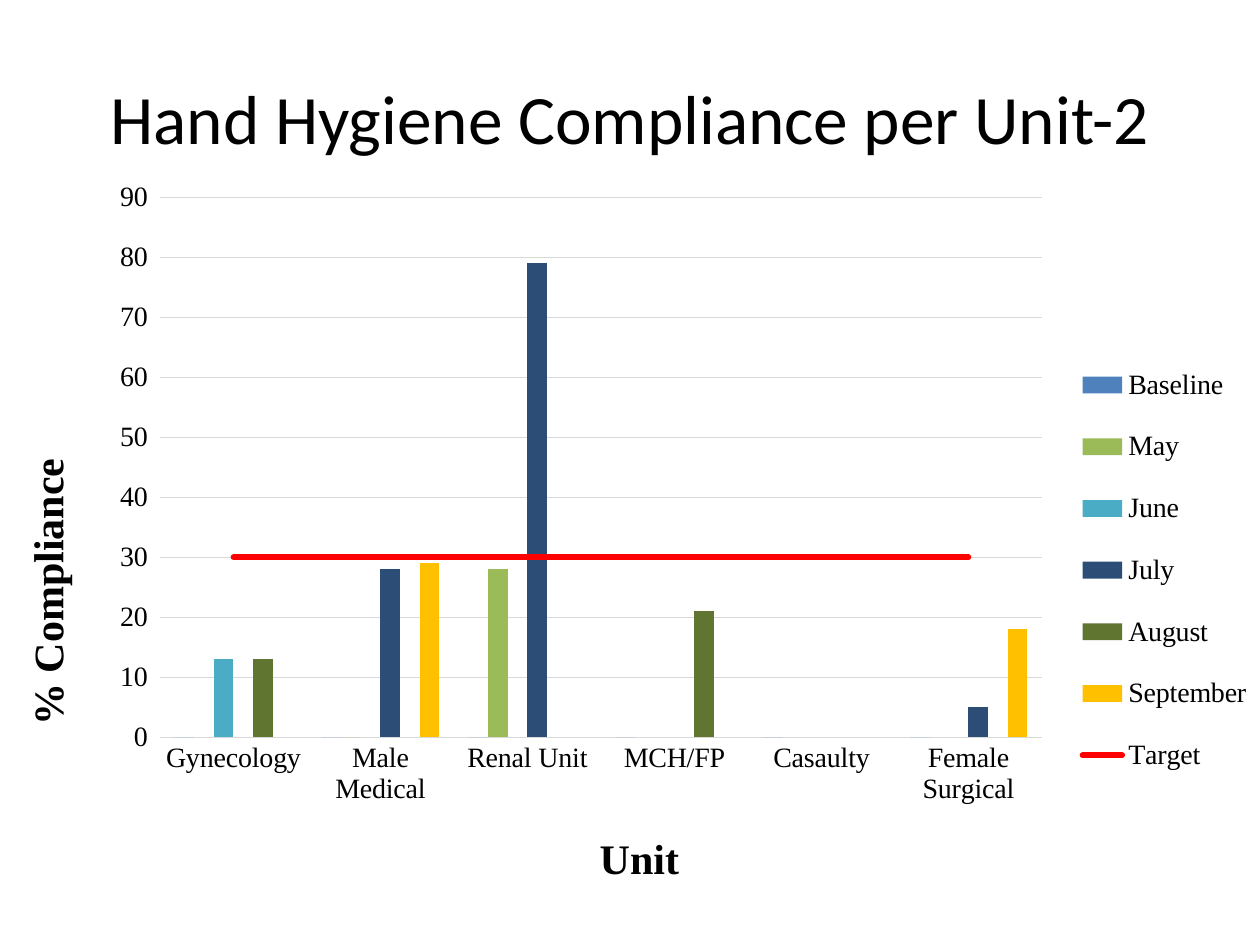
from dataclasses import dataclass
from typing import Optional

from lxml import etree
from pptx import Presentation
from pptx import util as u
from pptx.chart import data as chart_data
from pptx.dml.color import RGBColor
from pptx.enum import chart as kinds, text
from pptx.oxml import ns

BLACK = RGBColor(0x00, 0x00, 0x00)
GRID = RGBColor(0xD9, 0xD9, 0xD9)
BLUE = RGBColor(0x4F, 0x81, 0xBD)
GREEN = RGBColor(0x9B, 0xBB, 0x59)
TEAL = RGBColor(0x4B, 0xAC, 0xC6)
NAVY = RGBColor(0x2C, 0x4D, 0x75)
OLIVE = RGBColor(0x5F, 0x75, 0x30)
GOLD = RGBColor(0xFF, 0xC0, 0x00)
RED = RGBColor(0xFF, 0x00, 0x00)

UNITS = ["Gynecology", "Male Medical", "Renal Unit", "MCH/FP", "Casaulty", "Female Surgical"]


@dataclass
class Measure:
    name: str
    values: list[Optional[int]]
    color: RGBColor


MONTHS = [
    Measure("Baseline", [0] * len(UNITS), BLUE),
    Measure("May", [None, 0, 28, None, None, None], GREEN),
    Measure("June", [13, None, None, None, None, None], TEAL),
    Measure("July", [None, 28, 79, None, None, 5], NAVY),
    Measure("August", [13, None, None, 21, None, None], OLIVE),
    Measure("September", [None, 29, None, None, None, 18], GOLD),
]
TARGET = Measure("Target", [30] * len(UNITS), RED)


def add_child(parent, tag: str, value: Optional[str] = None):
    child = etree.SubElement(parent, ns.qn(tag))
    if value is not None:
        child.set("val", value)
    return child


def place(element, index: int, x: float, y: float,
          size: Optional[tuple[float, float]] = None, inner: bool = False) -> None:
    for old in element.findall(ns.qn("c:layout")):
        element.remove(old)
    layout = etree.Element(ns.qn("c:layout"))
    manual = add_child(layout, "c:manualLayout")
    if inner:
        add_child(manual, "c:layoutTarget", "inner")
    add_child(manual, "c:xMode", "edge")
    add_child(manual, "c:yMode", "edge")
    add_child(manual, "c:x", str(x))
    add_child(manual, "c:y", str(y))
    if size:
        add_child(manual, "c:w", str(size[0]))
        add_child(manual, "c:h", str(size[1]))
    element.insert(index, layout)


def add_title(page, words: str) -> None:
    box = page.shapes.add_textbox(u.Inches(0.5), u.Inches(0.3), u.Inches(9), u.Inches(1.25))
    frame = box.text_frame
    frame.word_wrap = True
    frame.vertical_anchor = text.MSO_ANCHOR.MIDDLE
    para = frame.paragraphs[0]
    para.alignment = text.PP_ALIGN.CENTER
    span = para.add_run()
    span.text = words
    span.font.name = "Calibri"
    span.font.size = u.Pt(39.6)
    span.font.color.rgb = BLACK


def title_axis(axis, words: str, x: float, y: float, rotation: int = 0) -> None:
    frame = axis.axis_title.text_frame
    span = frame.paragraphs[0].add_run()
    span.text = words
    span.font.name = "Times New Roman"
    span.font.size = u.Pt(24)
    span.font.bold = True
    span.font.color.rgb = BLACK
    body = frame.paragraphs[0]._p.getparent().find(ns.qn("a:bodyPr"))
    body.set("rot", str(rotation * 60000))
    body.set("vert", "horz")
    place(axis.axis_title._element, 1, x, y)


def move_last_to_line(chart) -> None:
    bars = chart.plots[0]._element
    series = bars.findall(ns.qn("c:ser"))[-1]
    for flag in series.findall(ns.qn("c:invertIfNegative")):
        series.remove(flag)
    lines = etree.Element(ns.qn("c:lineChart"))
    add_child(lines, "c:grouping", "standard")
    add_child(lines, "c:varyColors", "0")
    lines.append(series)
    add_child(lines, "c:marker", "1")
    for axis in bars.findall(ns.qn("c:axId")):
        add_child(lines, "c:axId", axis.get("val"))
    bars.addnext(lines)


def style_series(chart) -> None:
    bars, lines = chart.plots
    bars.gap_width = 150
    bars.overlap = 0
    bars.vary_by_categories = False
    for series, month in zip(bars.series, MONTHS):
        series.format.fill.solid()
        series.format.fill.fore_color.rgb = month.color
        series.invert_if_negative = False
    goal = lines.series[0]
    goal.smooth = False
    goal.marker.style = kinds.XL_MARKER_STYLE.NONE
    goal.format.line.color.rgb = TARGET.color
    goal.format.line.width = u.Pt(3.25)
    goal._element.find(".//" + ns.qn("a:ln")).set("cap", "rnd")


def style_axes(chart) -> None:
    units, percent = chart.category_axis, chart.value_axis
    units.major_tick_mark = kinds.XL_TICK_MARK.NONE
    percent.major_tick_mark = kinds.XL_TICK_MARK.OUTSIDE
    percent.minimum_scale, percent.maximum_scale, percent.major_unit = 0, 90, 10
    percent.has_major_gridlines = True
    percent.format.line.fill.background()
    for line in (units.format.line, percent.major_gridlines.format.line):
        line.color.rgb = GRID
        line.width = u.Pt(0.75)
    title_axis(units, "Unit", 0.47, 0.88)
    title_axis(percent, "% Compliance", 0.01, 0.38, rotation=-90)


def add_compliance_chart(page) -> None:
    table = chart_data.CategoryChartData()
    table.categories = UNITS
    for measure in [*MONTHS, TARGET]:
        table.add_series(measure.name, measure.values)
    chart = page.shapes.add_chart(
        kinds.XL_CHART_TYPE.COLUMN_CLUSTERED,
        u.Inches(0), u.Inches(1.33), u.Inches(10), u.Inches(5.92), table).chart
    chart.has_title = False
    chart.font.name = "Times New Roman"
    chart.font.size = u.Pt(16)
    chart.font.color.rgb = BLACK
    chart.has_legend = True
    chart.legend.position = kinds.XL_LEGEND_POSITION.RIGHT
    chart.legend.include_in_layout = False
    move_last_to_line(chart)
    style_series(chart)
    style_axes(chart)
    place(chart.legend._element, 1, 0.86, 0.23, (0.14, 0.62))
    place(chart.plots[0]._element.getparent(), 0, 0.127, 0.04, (0.7, 0.724), inner=True)


def main() -> None:
    deck = Presentation()
    deck.slide_width, deck.slide_height = u.Inches(10), u.Inches(7.5)
    page = deck.slides.add_slide(deck.slide_layouts[6])
    add_title(page, "Hand Hygiene Compliance per Unit-2")
    add_compliance_chart(page)
    deck.save("out.pptx")


if __name__ == "__main__":
    main()
